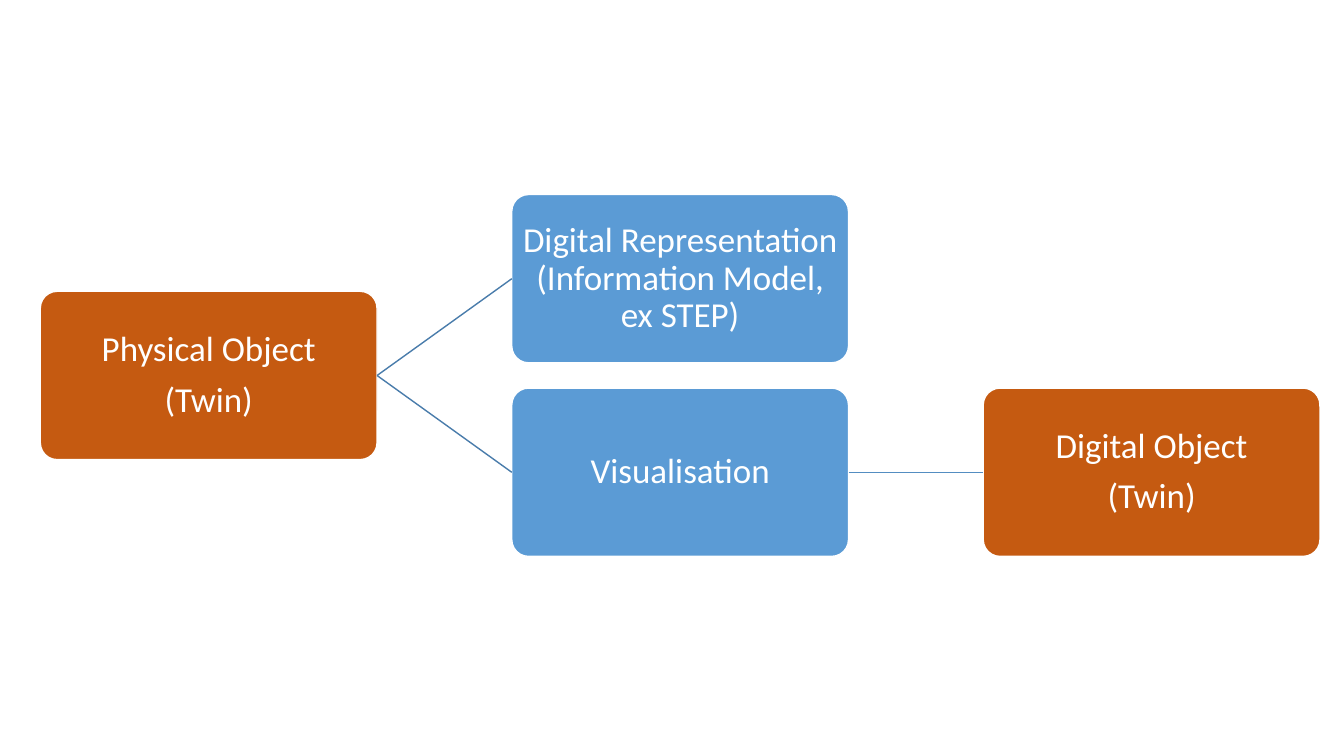
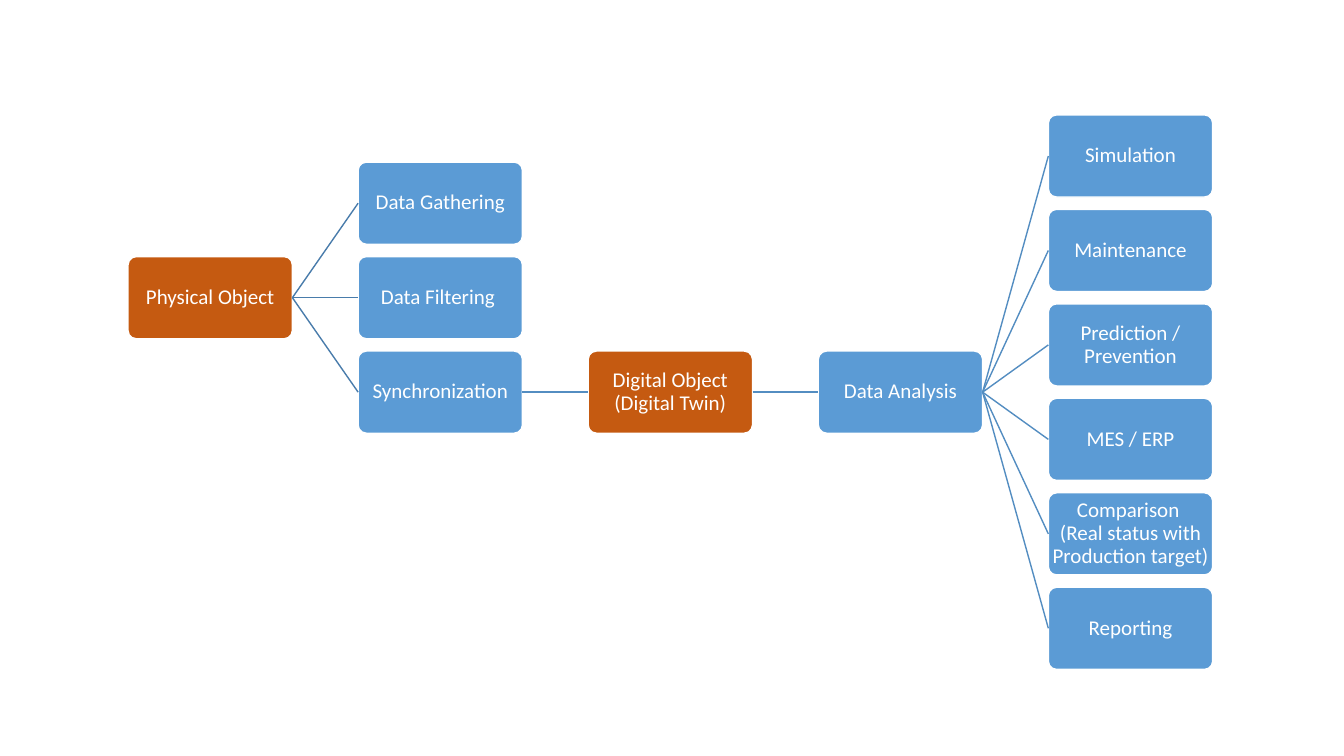
import pptx
import pptx.util
import pptx.dml.color
import pptx.enum.shapes
import pptx.enum.text
import pptx.oxml.ns
import lxml.etree

Inches = pptx.util.Inches
Pt = pptx.util.Pt
WHITE, BLUE, RUST = "FFFFFF", "5B9BD5", "C55A11"
NEAR, FAR = "497CAB", "538DC1"


def tint(form, code):
    form.rgb = pptx.dml.color.RGBColor.from_string(code)


def apply(item, form):
    for name, value in form.items():
        setattr(item, name, value)


charts = [
    {
        "left": 0.4, "top": 1.93, "width": 3.34, "size": 25, "inset": 0.02,
        "nodes": [
            ("Physical Object\n(Twin)", 0, 0.5, None, RUST),
            ("Digital Representation (Information Model, ex STEP)", 1, 0, 0, BLUE),
            ("Visualisation", 1, 1, 0, BLUE),
            ("Digital Object\n(Twin)", 2, 1, 2, RUST),
        ],
    },
    {
        "left": 1.27, "top": 1.14, "width": 1.63, "size": 15, "inset": 0.01,
        "nodes": [
            ("Physical Object", 0, 1.5, None, RUST),
            ("Data Gathering", 1, 0.5, 0, BLUE),
            ("Data Filtering ", 1, 1.5, 0, BLUE),
            ("Synchronization", 1, 2.5, 0, BLUE),
            ("Digital Object\v(Digital Twin)", 2, 2.5, 3, RUST),
            ("Data Analysis", 3, 2.5, 4, BLUE),
            ("Simulation", 4, 0, 5, BLUE),
            ("Maintenance", 4, 1, 5, BLUE),
            ("Prediction / Prevention", 4, 2, 5, BLUE),
            ("MES / ERP", 4, 3, 5, BLUE),
            ("Comparison \v(Real status with Production target)", 4, 4, 5, BLUE),
            ("Reporting", 4, 5, 5, BLUE),
        ],
    },
]

deck = pptx.Presentation()
apply(deck, {"slide_width": Inches(13.33), "slide_height": Inches(7.5)})

for chart in charts:
    slide = deck.slides.add_slide(deck.slide_layouts[6])
    wide = chart["width"]
    high = wide / 2
    inset = Inches(chart["inset"])
    frame_form = {
        "word_wrap": True,
        "vertical_anchor": pptx.enum.text.MSO_ANCHOR.MIDDLE,
        "margin_left": inset, "margin_right": inset,
        "margin_top": inset, "margin_bottom": inset,
    }
    para_form = {
        "alignment": pptx.enum.text.PP_ALIGN.CENTER,
        "line_spacing": 0.9,
        "space_after": Pt(round(chart["size"] * 0.37)),
    }
    font_form = {"name": "Calibri", "size": Pt(chart["size"])}
    boxes = []

    for text, col, row, source, color in chart["nodes"]:
        box = slide.shapes.add_shape(
            pptx.enum.shapes.MSO_SHAPE.ROUNDED_RECTANGLE,
            Inches(chart["left"] + col * wide * 1.4),
            Inches(chart["top"] + row * high * 1.15),
            Inches(wide), Inches(high))
        box.shadow.inherit = False
        box.adjustments[0] = 0.1
        box.fill.solid()
        tint(box.fill.fore_color, color)
        tint(box.line.color, WHITE)
        box.line.width = Pt(1)
        frame = box.text_frame
        frame.text = text
        apply(frame, frame_form)
        for para in frame.paragraphs:
            apply(para, para_form)
            for run in para.runs:
                apply(run.font, font_form)
                tint(run.font.color, WHITE)
        boxes.append(box)

        if source is not None:
            link = slide.shapes.add_connector(
                pptx.enum.shapes.MSO_CONNECTOR.STRAIGHT, 0, 0, 0, 0)
            link.begin_connect(boxes[source], 3)
            link.end_connect(box, 1)
            tint(link.line.color, NEAR if col == 1 else FAR)
            link.line.width = Pt(1)
            lxml.etree.SubElement(
                link._element.spPr, pptx.oxml.ns.qn("a:effectLst"))

deck.save("out.pptx")
